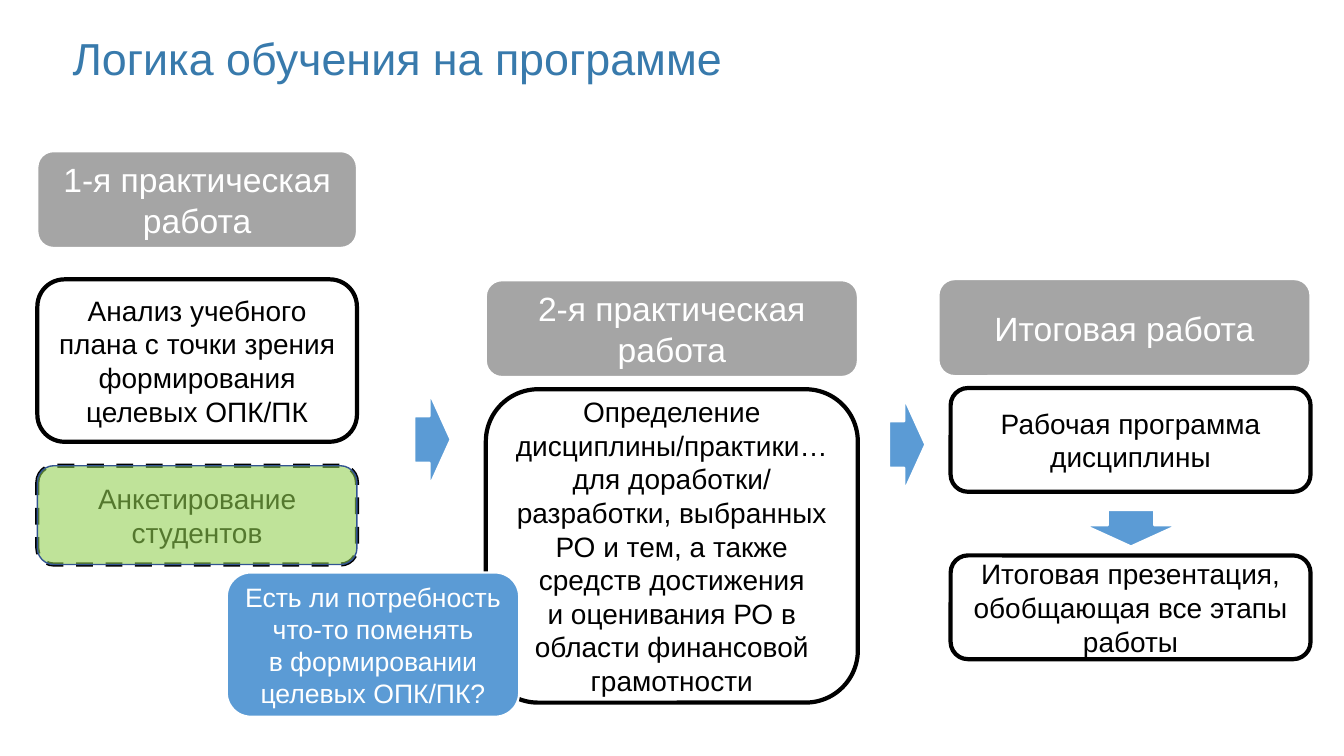
from lxml.etree import SubElement
from pptx import Presentation
from pptx.dml.color import RGBColor
from pptx.enum.dml import MSO_LINE
from pptx.enum.shapes import MSO_SHAPE
from pptx.enum.text import MSO_ANCHOR, PP_ALIGN
from pptx.oxml.ns import qn
from pptx.util import Inches, Pt

WIDTH, HEIGHT = Inches(13.33), Inches(7.5)
WHITE, BLACK, GREY, BLUE = "FFFFFF", "000000", "A5A5A5", "5B9BD5"


def color(hex_value):
    """Turn a hex string into a colour."""
    return RGBColor.from_string(hex_value)


def within(box, left, top, width, height):
    """Return the part of a box given by percentages of its own size."""
    x, y, w, h = box
    return (x + w * left / 100, y + h * top / 100, w * width / 100, h * height / 100)


def to_slide(box):
    """Convert percentages of the slide to lengths."""
    return [round(share * full / 100) for share, full in zip(box, (WIDTH, HEIGHT) * 2)]


def write(frame, text, size, ink):
    """Set text and format every run of it."""
    frame.text = text
    frame.word_wrap = True
    for paragraph in frame.paragraphs:
        for run in paragraph.runs:
            run.font.name = "Arial"
            run.font.size = Pt(size)
            run.font.color.rgb = color(ink)


def block(slide, box, kind, fill, line, weight):
    """Draw a filled and outlined preset shape."""
    shape = slide.shapes.add_shape(kind, *to_slide(box))
    shape.shadow.inherit = False
    shape.fill.solid()
    shape.fill.fore_color.rgb = color(fill)
    shape.line.color.rgb = color(line)
    shape.line.width = Pt(weight)
    return shape


def card(slide, box, text, size=20, fill=WHITE, line=BLACK, weight=3, ink=BLACK):
    """Draw a rounded card with centred text."""
    shape = block(slide, box, MSO_SHAPE.ROUNDED_RECTANGLE, fill, line, weight)
    write(shape.text_frame, text, size, ink)
    shape.text_frame.vertical_anchor = MSO_ANCHOR.MIDDLE
    shape.text_frame.paragraphs[0].alignment = PP_ALIGN.CENTER
    return shape


def header(slide, box, text):
    """Draw the grey heading of a stage."""
    card(slide, box, text, 24, GREY, WHITE, 1.5, WHITE)


def arrow(slide, box, kind=MSO_SHAPE.RIGHT_ARROW):
    """Draw a blue block arrow."""
    block(slide, box, kind, BLUE, WHITE, 1.5).adjustments[1] = 0.58


def title(slide, box):
    """Write the slide title."""
    frame = slide.shapes.add_textbox(*to_slide(box)).text_frame
    frame.margin_left = frame.margin_right = frame.margin_top = frame.margin_bottom = 0
    write(frame, "Логика обучения на программе", 32, "387AAC")


def first_practice(slide, box):
    """Place the first stage with its survey under a translucent highlight."""
    survey_box = within(box, 0, 76.1, 100, 23.9)
    header(slide, within(box, 0, 0, 100, 23.4), "1-я практическая работа")
    card(slide, within(box, 0, 31, 100, 39.3),
         "Анализ учебного плана с точки зрения формирования целевых ОПК/ПК")
    survey = card(slide, survey_box, "Анкетирование студентов")
    survey.line.dash_style = MSO_LINE.DASH
    highlight = block(slide, survey_box, MSO_SHAPE.ROUNDED_RECTANGLE, "92D050", "325491", 1)
    tint = highlight.fill._xPr.find(qn("a:solidFill"))[0]
    SubElement(tint, qn("a:alpha")).set("val", "58000")


def second_practice(slide, box):
    """Place the second stage."""
    header(slide, within(box, 0, 0, 100, 22.9), "2-я практическая работа")
    card(slide, within(box, 0, 25.8, 100, 74.2),
         "Определение дисциплины/практики… для доработки/ разработки, выбранных РО "
         "и тем, а также средств достижения\vи оценивания РО в области финансовой грамотности")


def final_work(slide, box):
    """Place the final stage with its two results."""
    header(slide, within(box, 0, 0, 100, 25.5), "Итоговая работа")
    results = ("Рабочая программа дисциплины",
               "Итоговая презентация, обобщающая все этапы работы")
    for index, result in enumerate(results):
        card(slide, within(box, 3.25, 28.65 + index * 44.05, 96.75, 27.3), result)
    arrow(slide, within(box, 39.3, 60.75, 24.9, 9.55), MSO_SHAPE.DOWN_ARROW)


def question(slide, box):
    """Place the blue question that overlaps the second stage."""
    card(slide, box, "Есть ли потребность что-то поменять\vв формировании целевых ОПК/ПК?",
         19, BLUE, WHITE, 1.5, WHITE)


def main():
    """Build and save the slide."""
    deck = Presentation()
    deck.slide_width, deck.slide_height = WIDTH, HEIGHT
    slide = deck.slides.add_slide(deck.slide_layouts[6])
    title(slide, (5.4, 4, 67.5, 7))
    first_practice(slide, (2.78, 20, 23.78, 54.67))
    arrow(slide, (30.83, 52, 2.7, 12.27))
    second_practice(slide, (36.15, 37.07, 27.68, 55.87))
    arrow(slide, (66.15, 52.67, 2.7, 12.27))
    final_work(slide, (69.83, 36.93, 27.68, 50.27))
    question(slide, (16.88, 75.73, 21.75, 19.07))
    deck.save("out.pptx")


if __name__ == "__main__":
    main()
